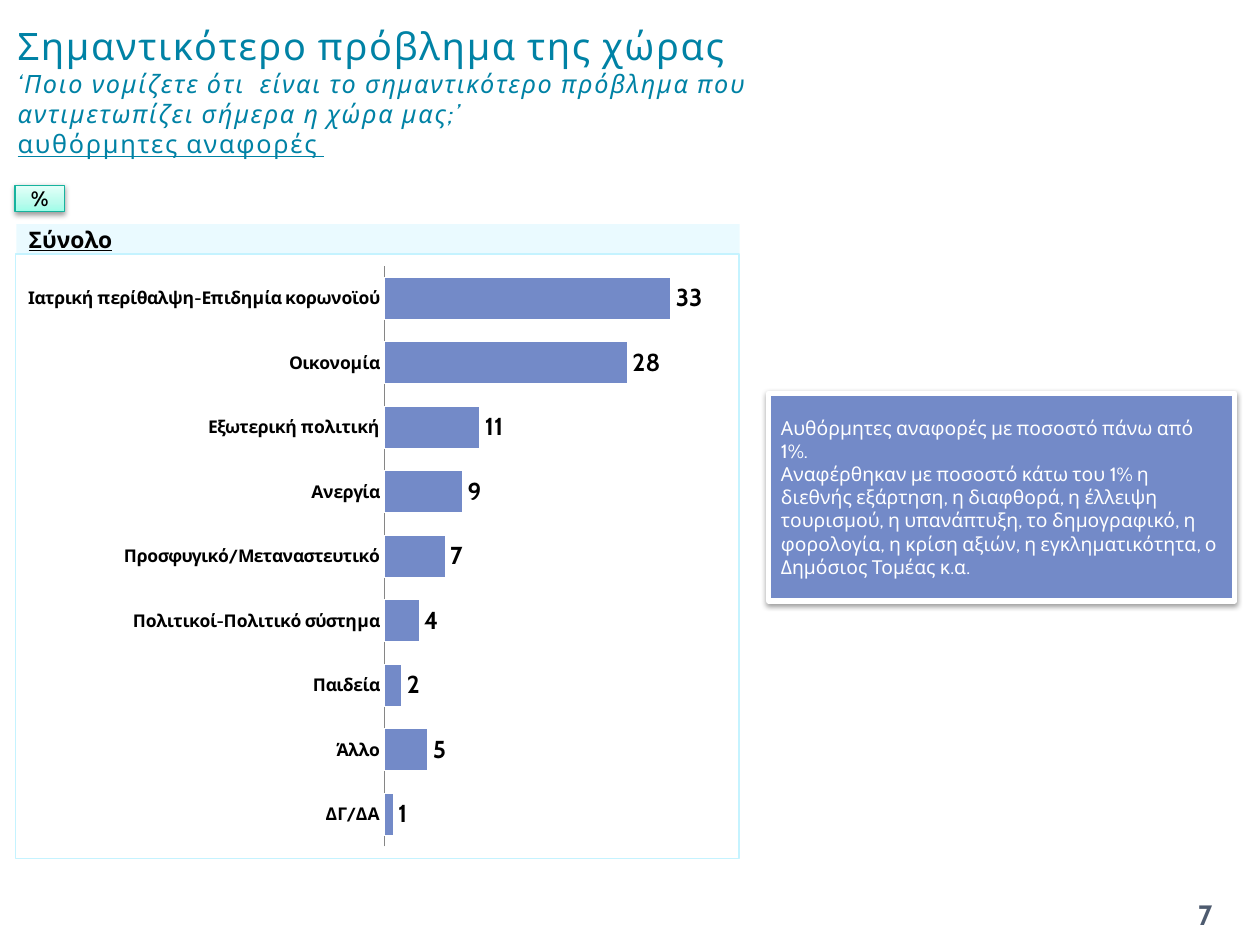
from lxml import etree
from pptx import Presentation, util as u
from pptx.chart.data import CategoryChartData
from pptx.dml.color import RGBColor
from pptx.enum import chart as charts, shapes, text
from pptx.oxml import parse_xml
from pptx.oxml.ns import nsdecls, qn

FONT = "Cabin"
TEAL = RGBColor(0x00, 0x82, 0xA5)
BLUE = RGBColor(0x73, 0x8A, 0xC8)
PALE = RGBColor(0xC5, 0xF3, 0xFF)
GREEN = RGBColor(0x16, 0xB3, 0x9E)
SLATE = RGBColor(0x4E, 0x5B, 0x6F)
GREY = RGBColor(0x86, 0x86, 0x86)
BLACK = RGBColor(0, 0, 0)
WHITE = RGBColor(0xFF, 0xFF, 0xFF)
MINT_STOPS = [(0, "9DFDE8"), (35, "BBFCED"), (100, "E4FFF9")]

COLUMNS, ROWS = 100, 75

ANSWERS = {
    "Ιατρική περίθαλψη-Επιδημία κορωνοϊού": 33,
    "Οικονομία": 28,
    "Εξωτερική πολιτική": 11,
    "Ανεργία": 9,
    "Προσφυγικό/Μεταναστευτικό": 7,
    "Πολιτικοί-Πολιτικό σύστημα": 4,
    "Παιδεία": 2,
    "Άλλο": 5,
    "ΔΓ/ΔΑ": 1,
}
NOTES = [
    "Αυθόρμητες αναφορές με ποσοστό πάνω από 1%.",
    "Αναφέρθηκαν με ποσοστό κάτω του 1% η διεθνής εξάρτηση, η διαφθορά, η έλλειψη "
    "τουρισμού, η υπανάπτυξη, το δημογραφικό, η φορολογία, η κρίση αξιών, "
    "η εγκληματικότητα, ο Δημόσιος Τομέας κ.α.",
]


def format_font(font, size, color=BLACK, bold=False, italic=False, underline=False):
    font.name, font.size, font.color.rgb = FONT, u.Pt(size), color
    font.bold, font.italic, font.underline = bold, italic, underline


def add_text(paragraph, words, spacing=0, **style):
    run = paragraph.add_run()
    run.text = words
    format_font(run.font, **style)
    if spacing:
        run.font._element.set("spc", str(spacing * 100))


def add_shadow(shape):
    shape._element.spPr.append(parse_xml(
        f'<a:effectLst {nsdecls("a")}><a:outerShdw blurRad="{u.Pt(3.1)}" dist="{u.Pt(1.6)}" '
        'dir="5400000" rotWithShape="0"><a:srgbClr val="000000"><a:alpha val="38000"/>'
        '</a:srgbClr></a:outerShdw></a:effectLst>'))


def set_gradient(shape, stops, angle):
    shape.fill.gradient()
    shape.fill.gradient_angle = 360 - angle
    stop_list = shape._element.spPr.find(qn("a:gradFill")).find(qn("a:gsLst"))
    for old in list(stop_list):
        stop_list.remove(old)
    for position, color in stops:
        stop = etree.SubElement(stop_list, qn("a:gs"), pos=str(position * 1000))
        etree.SubElement(stop, qn("a:srgbClr"), val=color)


class SurveySlide:
    def __init__(self, presentation):
        self.column = presentation.slide_width / COLUMNS
        self.row = presentation.slide_height / ROWS
        self.slide = presentation.slides.add_slide(presentation.slide_layouts[5])

    def place(self, left, top, width, height):
        return (round(left * self.column), round(top * self.row),
                round(width * self.column), round(height * self.row))

    def frame(self, shape, align=text.PP_ALIGN.LEFT):
        """Prepare the text frame and return its first paragraph."""
        frame = shape.text_frame
        frame.word_wrap = True
        frame.auto_size = text.MSO_AUTO_SIZE.NONE
        frame.vertical_anchor = text.MSO_ANCHOR.MIDDLE
        frame.paragraphs[0].alignment = align
        return frame.paragraphs[0]

    def title(self, area, lines):
        shape = self.slide.shapes.title
        shape.left, shape.top, shape.width, shape.height = self.place(*area)
        paragraph = self.frame(shape)
        for index, (words, style) in enumerate(lines):
            if index:
                paragraph.add_line_break()
            add_text(paragraph, words, color=TEAL, spacing=1, **style)

    def label(self, area, words, **style):
        box = self.slide.shapes.add_textbox(*self.place(*area))
        add_text(self.frame(box, text.PP_ALIGN.CENTER), words, **style)

    def panel(self, area, fill=None, line=None, line_width=0.75):
        shape = self.slide.shapes.add_shape(shapes.MSO_SHAPE.RECTANGLE, *self.place(*area))
        shape.shadow.inherit = False
        if fill is not None:
            shape.fill.solid()
            shape.fill.fore_color.rgb = fill
        if line is None:
            shape.line.fill.background()
        else:
            shape.line.color.rgb = line
            shape.line.width = u.Pt(line_width)
            shape._element.spPr.remove(shape._element.spPr.find(qn("a:effectLst")))
            add_shadow(shape)
        return shape

    def heading(self, area, words, rule_end):
        """Add a pale band whose underline runs on to a tab stop."""
        shape = self.panel(area, PALE)
        color = shape._element.spPr.find(qn("a:solidFill"))[0]
        etree.SubElement(color, qn("a:alpha"), val="35000")
        paragraph = self.frame(shape)
        tabs = etree.SubElement(paragraph._p.get_or_add_pPr(), qn("a:tabLst"))
        etree.SubElement(tabs, qn("a:tab"), pos=str(round(rule_end * self.column)), algn="l")
        add_text(paragraph, words, size=13, bold=True, underline=True)
        add_text(paragraph, "\t", size=12, underline=True)

    def badge(self, area, words):
        shape = self.panel(area, line=GREEN)
        set_gradient(shape, MINT_STOPS, 270)
        add_text(self.frame(shape, text.PP_ALIGN.CENTER), words, size=12, bold=True)

    def note(self, area, paragraphs):
        shape = self.panel(area, BLUE, WHITE, 3)
        paragraph = self.frame(shape)
        for index, words in enumerate(paragraphs):
            if index:
                paragraph = shape.text_frame.add_paragraph()
                paragraph.alignment = text.PP_ALIGN.LEFT
            add_text(paragraph, words, size=11, color=WHITE)

    def bar_chart(self, area, answers, plot_area):
        data = CategoryChartData(number_format="0")
        data.categories = list(answers)
        data.add_series("Series 1", list(answers.values()))
        chart = self.slide.shapes.add_chart(
            charts.XL_CHART_TYPE.BAR_CLUSTERED, *self.place(*area), data).chart
        chart.has_legend = chart.has_title = False
        format_font(chart.font, 18)

        categories, values = chart.category_axis, chart.value_axis
        categories.reverse_order = True
        categories.major_tick_mark = charts.XL_TICK_MARK.NONE
        categories.format.line.color.rgb = GREY
        format_font(categories.tick_labels.font, 10, bold=True)
        values.visible = values.has_major_gridlines = False
        values.minimum_scale, values.maximum_scale = 0, 35

        plot = chart.plots[0]
        plot.gap_width, plot.overlap, plot.vary_by_categories = 54, -25, False
        bars = plot.series[0]
        bars.format.fill.solid()
        bars.format.fill.fore_color.rgb = BLUE
        bars.format.line.color.rgb = WHITE
        labels = bars.data_labels
        labels.show_value = True
        labels.number_format, labels.number_format_is_linked = "0", False
        labels.position = charts.XL_LABEL_POSITION.OUTSIDE_END
        format_font(labels.font, 14, bold=True)
        self.finish_chart(chart, plot_area)

    def finish_chart(self, chart, plot_area):
        """Set the border and the inner plot area, given as shares of the chart."""
        body = chart.element.find(qn("c:chart"))
        body.addnext(parse_xml(
            f'<c:spPr {nsdecls("c", "a")}><a:noFill/><a:ln w="{u.Pt(0.75)}"><a:solidFill>'
            f'<a:srgbClr val="{PALE}"/></a:solidFill></a:ln></c:spPr>'))
        plot = body.find(qn("c:plotArea"))
        for old in plot.findall(qn("c:layout")):
            plot.remove(old)
        layout = etree.Element(qn("c:layout"))
        manual = etree.SubElement(layout, qn("c:manualLayout"))
        settings = [("layoutTarget", "inner"), ("xMode", "edge"), ("yMode", "edge"),
                    *zip("xywh", plot_area)]
        for name, value in settings:
            etree.SubElement(manual, qn(f"c:{name}"), val=str(value))
        plot.insert(0, layout)


def main():
    presentation = Presentation()
    presentation.slide_width, presentation.slide_height = u.Inches(10), u.Inches(7.5)
    survey = SurveySlide(presentation)
    survey.title((0.4, 1.3, 68.5, 11.8), [
        ("Σημαντικότερο πρόβλημα της χώρας", dict(size=21.6)),
        ("‘Ποιο νομίζετε ότι  είναι το σημαντικότερο πρόβλημα που αντιμετωπίζει "
         "σήμερα η χώρα μας;’", dict(size=14.4, italic=True)),
        ("αυθόρμητες αναφορές ", dict(size=14.4, underline=True)),
    ])
    survey.bar_chart((1.2, 20.1, 57.5, 48.1), ANSWERS, (0.51, 0.02, 0.42, 0.96))
    survey.label((91.7, 70.6, 7.9, 4), "7", size=16, color=SLATE, bold=True)
    survey.heading((1.3, 17.8, 57.4, 2.4), "Σύνολο", rule_end=10.8)
    survey.badge((1.2, 14.7, 3.9, 2.1), "%")
    survey.note((61, 31.2, 37, 16.5), NOTES)
    presentation.save("out.pptx")


if __name__ == "__main__":
    main()
